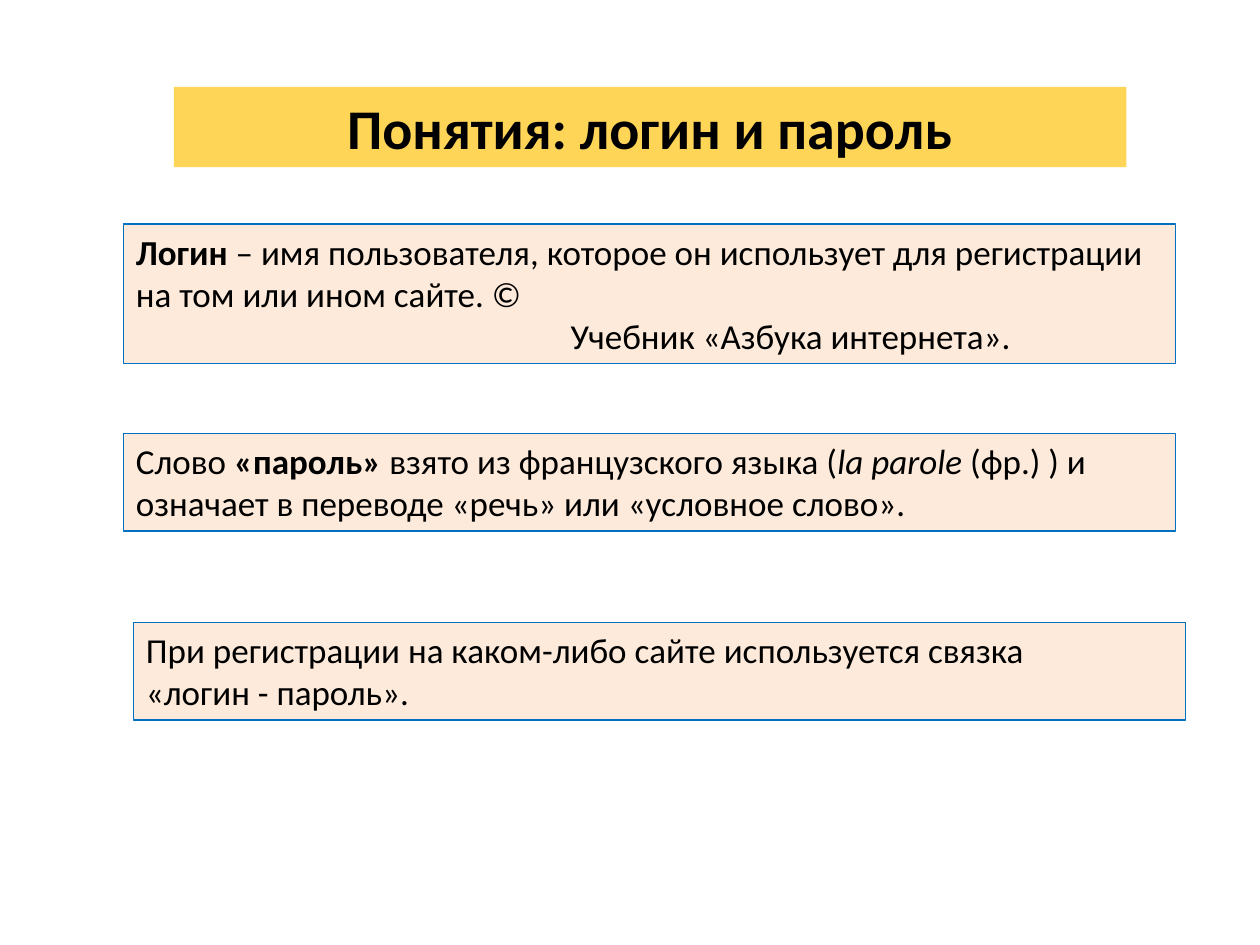
from lxml.etree import SubElement
from pptx import Presentation
from pptx.dml.color import RGBColor
from pptx.enum.shapes import MSO_SHAPE as Shape
from pptx.enum.text import MSO_ANCHOR as Anchor, MSO_AUTO_SIZE as Fit, PP_ALIGN as Align
from pptx.oxml.ns import qn
from pptx.util import Inches, Pt


def tint(code):
    """Turn a hex string into a colour."""
    return RGBColor.from_string(code)


class Deck:
    """Hold the style and the current slide."""

    font, ink, gold, peach, blue = "Calibri", "000000", "FFC000", "FDEADA", "0070C0"

    def __init__(self, wide, high):
        """Open a deck with one blank slide."""
        self.deck = Presentation()
        self.wide = self.deck.slide_width = Inches(wide)
        self.high = self.deck.slide_height = Inches(high)
        self.slide = self.deck.slides.add_slide(self.deck.slide_layouts[6])

    def panel(self, x, y, w, h, fill):
        """Draw a plain filled panel placed by shares of the slide."""
        box = self.slide.shapes.add_shape(
            Shape.RECTANGLE, round(x * self.wide), round(y * self.high),
            round(w * self.wide), round(h * self.high))
        box.shadow.inherit = False
        box.fill.solid()
        box.fill.fore_color.rgb = tint(fill)
        box.line.fill.background()
        frame = box.text_frame
        frame.word_wrap = True
        frame.vertical_anchor = Anchor.TOP
        frame.auto_size = Fit.SHAPE_TO_FIT_TEXT
        return box

    def words(self, para, runs, size, align=Align.LEFT):
        """Fill a paragraph with (text, style) runs; a newline breaks the line."""
        para.alignment = align
        for text, style in runs:
            for i, part in enumerate(text.split("\n")):
                if i:
                    para.add_line_break()
                run = para.add_run()
                run.text = part
                font = run.font
                font.name, font.size = self.font, Pt(size)
                font.color.rgb = tint(self.ink)
                font.bold, font.italic = style == "b", style == "i"

    def title(self, x, y, w, h, text):
        """Add the heading on a translucent band."""
        box = self.panel(x, y, w, h, self.gold)
        color = box.element.spPr.find(qn("a:solidFill"))[0]
        SubElement(color, qn("a:alpha")).set("val", "66000")
        self.words(box.text_frame.paragraphs[0], [(text, "b")], 32, Align.CENTER)

    def note(self, x, y, w, h, paras, cite=None):
        """Add an outlined note, with an indented source if given."""
        box = self.panel(x, y, w, h, self.peach)
        box.line.color.rgb = tint(self.blue)
        box.line.width = Pt(0.75)
        frame = box.text_frame
        for i, runs in enumerate(paras):
            para = frame.add_paragraph() if i else frame.paragraphs[0]
            self.words(para, runs, 20)
        if cite:
            para = frame.add_paragraph()
            para._p.get_or_add_pPr().set("marL", str(Inches(3.45)))
            self.words(para, [(cite, "")], 20)


def main():
    """Build the slide on login and password."""
    deck = Deck(10, 7.5)
    deck.title(0.138, 0.092, 0.756, 0.085, "Понятия: логин и пароль")
    left, wide, high = 0.098, 0.835, 0.103
    deck.note(left, 0.237, wide, 0.148, [
        [("Логин", "b"), (" – имя пользователя, которое он использует для регистрации", "")],
        [("на том или ином сайте. ©", "")],
    ], "Учебник «Азбука интернета».")
    deck.note(left, 0.459, wide, high, [[
        ("Слово ", ""), ("«пароль»", "b"), (" взято из французского языка (", ""),
        ("la parole ", "i"),
        ("(фр.) ) и означает в переводе «речь» или «условное слово».", "")]])
    deck.note(left + 0.008, 0.659, wide, high, [[
        ("При регистрации на каком-либо сайте используется связка\n«логин - пароль».", "")]])
    deck.deck.save("out.pptx")


if __name__ == "__main__":
    main()
